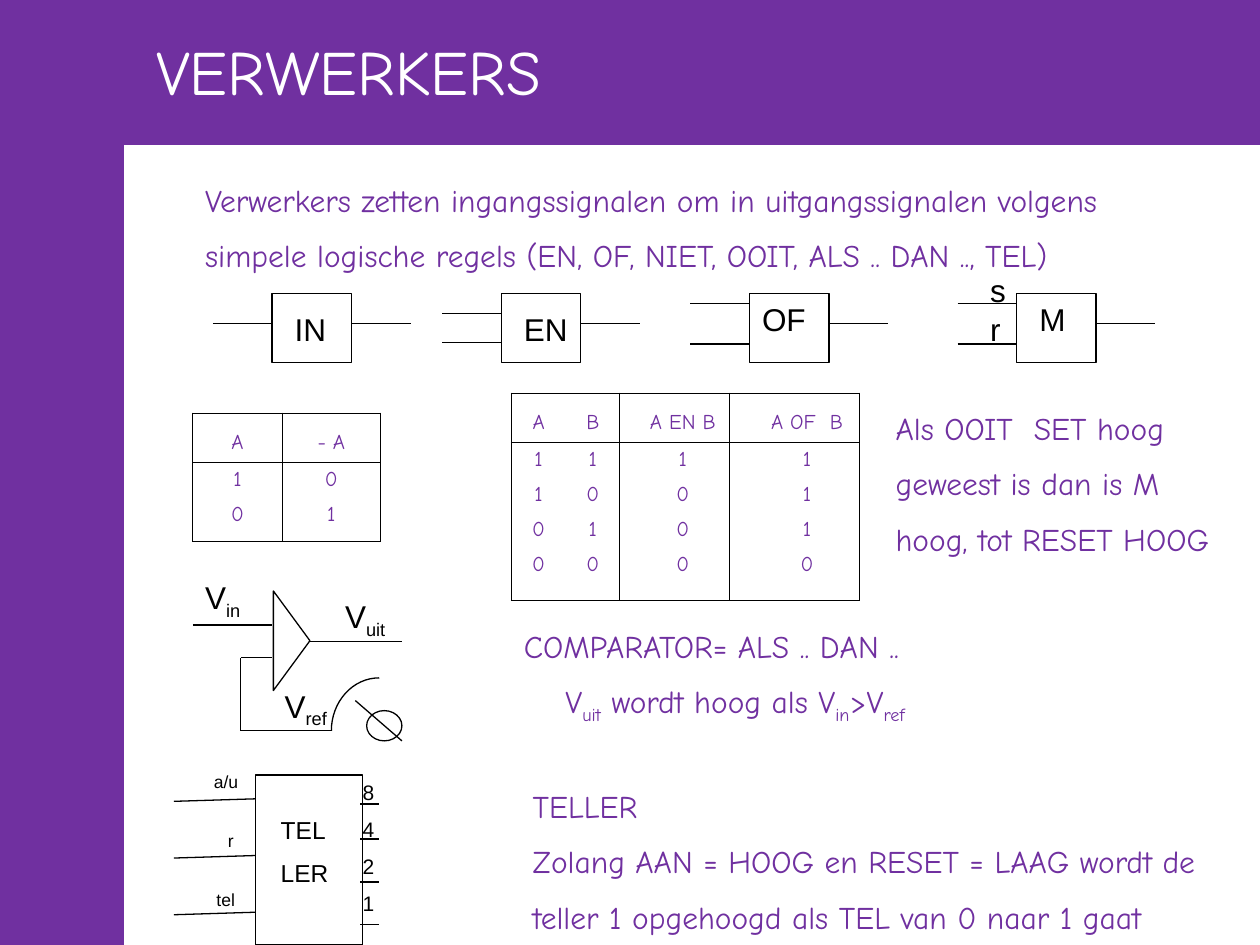
from dataclasses import dataclass
import math

from lxml import etree
from pptx import Presentation
from pptx import util as u
from pptx.dml.color import RGBColor
from pptx.enum import shapes as kinds, text
from pptx.oxml import ns

Inches = u.Inches


@dataclass(frozen=True)
class Theme:
    """Colours, fonts and type sizes of the slide."""
    purple: RGBColor = RGBColor(0x70, 0x30, 0xA0)
    black: RGBColor = RGBColor(0, 0, 0)
    white: RGBColor = RGBColor(255, 255, 255)
    heading_font: str = "Comic Neue"
    label_font: str = "Arial"
    title: int = 36
    body: int = 18
    block: int = 14
    table: int = 12
    pin: int = 10
    rule: float = 0.75
    paragraph_gap: float = 0.55


THEME = Theme()


def style_run(run, size, font, color):
    """Set the type of one run."""
    run.font.size = u.Pt(size)
    run.font.name = font
    run.font.color.rgb = color


def add_text(shapes, left, top, width, height, lines, size=THEME.body,
             font=THEME.label_font, color=THEME.black, indents=()):
    """Add a text box; every second part between underscores is subscript."""
    box = shapes.add_textbox(Inches(left), Inches(top), Inches(width), Inches(height))
    frame = box.text_frame
    frame.word_wrap = True
    frame.auto_size = text.MSO_AUTO_SIZE.SHAPE_TO_FIT_TEXT
    frame.text = "\n".join(lines)
    for index, paragraph in enumerate(frame.paragraphs):
        paragraph.space_before = u.Pt(size * THEME.paragraph_gap)
        if index < len(indents):
            paragraph._p.get_or_add_pPr().set("marL", str(Inches(indents[index])))
        parts = paragraph.text.split("_")
        paragraph.text = parts[0]
        for part in parts[1:]:
            paragraph.add_run().text = part
        for position, run in enumerate(paragraph.runs):
            style_run(run, size, font, color)
            if position % 2:
                run.font._element.set("baseline", "-25000")


def add_body(shapes, left, top, width, height, lines, indents=()):
    """Add purple explanatory text."""
    add_text(shapes, left, top, width, height, lines, THEME.body,
             THEME.heading_font, THEME.purple, indents)


def finish_shape(shape, fill=None):
    """Set fill and outline and remove the shadow."""
    shape.shadow.inherit = False
    if fill is None:
        shape.fill.background()
    else:
        shape.fill.solid()
        shape.fill.fore_color.rgb = fill
    shape.line.color.rgb = fill or THEME.black
    shape.line.width = u.Pt(THEME.rule)


def add_figure(shapes, kind, left, top, width, height, fill=None, rotation=0):
    """Add a preset shape."""
    shape = shapes.add_shape(kind, Inches(left), Inches(top), Inches(width), Inches(height))
    shape.rotation = rotation
    finish_shape(shape, fill)


def add_line(shapes, x1, y1, x2, y2):
    """Add a thin black line."""
    line = shapes.add_connector(kinds.MSO_CONNECTOR.STRAIGHT,
                                Inches(x1), Inches(y1), Inches(x2), Inches(y2))
    line.line.color.rgb = THEME.black
    line.line.width = u.Pt(THEME.rule)
    etree.SubElement(line._element.spPr, ns.qn("a:effectLst"))


def add_quarter_arc(shapes, left, top, width, height, steps=16):
    """Add the upper left quarter of an ellipse as an open outline."""
    points = []
    for step in range(steps + 1):
        angle = math.pi / 2 * step / steps
        points.append((Inches(left + width * (1 - math.cos(angle))),
                       Inches(top + height * (1 - math.sin(angle)))))
    builder = shapes.build_freeform(*points[0])
    builder.add_line_segments(points[1:], close=False)
    finish_shape(builder.convert_to_shape())


def add_gate(shapes, left, label, label_offset, input_heights):
    """Add a logic gate with its input and output wires."""
    top, width, wire = 2.33, 0.63, 0.47
    add_figure(shapes, kinds.MSO_SHAPE.RECTANGLE, left, top, width, 0.55)
    add_line(shapes, left + width, 2.57, left + width + wire, 2.57)
    for height in input_heights:
        add_line(shapes, left - wire, height, left, height)
    add_text(shapes, left + label_offset[0], top + label_offset[1], width, 0.4, [label])


def set_borders(cell, visible):
    """Draw the named sides of a cell and hide the others."""
    properties = cell._tc.get_or_add_tcPr()
    for side in "LRTB":
        line = etree.SubElement(properties, ns.qn(f"a:ln{side}"), w=str(u.Pt(THEME.rule)))
        if side in visible:
            fill = etree.SubElement(line, ns.qn("a:solidFill"))
            etree.SubElement(fill, ns.qn("a:srgbClr"), val=str(THEME.black))
        else:
            etree.SubElement(line, ns.qn("a:noFill"))


def add_truth_table(shapes, left, top, widths, heights, rows, rules, nudges):
    """Add a truth table with vertical rules at the given column edges."""
    graphic = shapes.add_table(len(rows), len(widths), Inches(left), Inches(top),
                               Inches(sum(widths)), Inches(sum(heights)))
    table = graphic.table
    table.first_row = table.horz_banding = False
    for column, width in zip(table.columns, widths):
        column.width = Inches(width)
    for r, values in enumerate(rows):
        table.rows[r].height = Inches(heights[r])
        for c, value in enumerate(values):
            cell = table.cell(r, c)
            sides = {"L": c in rules, "R": c + 1 in rules,
                     "T": r < 2, "B": r in (0, len(rows) - 1)}
            set_borders(cell, [side for side, shown in sides.items() if shown])
            cell.fill.background()
            cell.margin_left, cell.margin_right = Inches(nudges[c]), 0
            cell.margin_top, cell.margin_bottom = Inches(0.04 if r else 0.14), 0
            cell.text = value
            paragraph = cell.text_frame.paragraphs[0]
            paragraph.alignment = text.PP_ALIGN.CENTER
            style_run(paragraph.runs[0], THEME.table, THEME.heading_font, THEME.purple)


def add_gates(shapes):
    """Add the four gates and the memory inputs."""
    add_gate(shapes, 2.16, "IN", (0.08, 0.08), [2.57])
    add_gate(shapes, 3.98, "EN", (0.08, 0.08), [2.49, 2.72])
    add_gate(shapes, 5.95, "OF", (0, 0), [2.41, 2.73])
    add_gate(shapes, 8.07, "M", (0.08, 0), [2.41, 2.73])
    for label, top in (("s", 2.1), ("r", 2.41)):
        add_text(shapes, 7.76, top, 0.39, 0.4, [label])


def add_counter(shapes):
    """Add the counter with its inputs and binary outputs."""
    add_figure(shapes, kinds.MSO_SHAPE.RECTANGLE, 2.03, 6.15, 0.85, 1.35)
    add_text(shapes, 2.13, 6.42, 0.6, 0.68, ["TEL", "LER"], THEME.block)
    for height in (6.38, 6.66, 7, 7.34):
        add_line(shapes, 2.86, height, 3.01, height)
    for label, left, top, height in (("a/u", 1.6, 6.07, 6.36), ("r", 1.71, 6.54, 6.81),
                                     ("tel", 1.62, 7.01, 7.26)):
        add_line(shapes, 1.38, height, 2.03, height - 0.02)
        add_text(shapes, left, top, 0.5, 0.27, [label], THEME.pin)
    add_text(shapes, 2.78, 6.14, 0.33, 1.2, list("8421"), THEME.table)


def add_comparator(shapes):
    """Add the comparator with its adjustable reference."""
    add_figure(shapes, kinds.MSO_SHAPE.ISOSCELES_TRIANGLE, 1.92, 4.94, 0.79, 0.29, rotation=90)
    for ends in ((1.53, 4.96, 2.16, 4.96), (2.16, 5.22, 1.91, 5.22), (1.91, 5.22, 1.91, 5.8),
                 (1.91, 5.8, 2.63, 5.8), (2.45, 5.09, 3.19, 5.09), (2.82, 5.56, 3.19, 5.88)):
        add_line(shapes, *ends)
    add_quarter_arc(shapes, 2.63, 5.38, 0.38, 0.42)
    add_figure(shapes, kinds.MSO_SHAPE.OVAL, 2.91, 5.64, 0.28, 0.24)
    for label, left, top, width in (("V_in", 1.53, 4.54, 0.55), ("V_uit", 2.64, 4.69, 0.6),
                                    ("V_ref", 2.16, 5.4, 0.71)):
        add_text(shapes, left, top, width, 0.4, [label])


def main():
    """Build and save the slide."""
    presentation = Presentation()
    presentation.slide_width, presentation.slide_height = Inches(10), Inches(7.5)
    shapes = presentation.slides.add_slide(presentation.slide_layouts[6]).shapes
    add_figure(shapes, kinds.MSO_SHAPE.RECTANGLE, 0, 0, 10, 1.15, THEME.purple)
    add_figure(shapes, kinds.MSO_SHAPE.RECTANGLE, 0, 0, 0.98, 7.5, THEME.purple)
    add_text(shapes, 1.14, 0.21, 6.22, 0.7, ["VERWERKERS"], THEME.title,
             THEME.heading_font, THEME.white)
    add_body(shapes, 1.53, 1.39, 8.47, 0.85,
             ["Verwerkers zetten ingangssignalen om in uitgangssignalen volgens",
              "simpele logische regels (EN, OF, NIET, OOIT, ALS .. DAN .., TEL)"])
    for add_part in (add_gates, add_counter, add_comparator):
        add_part(shapes.add_group_shape().shapes)
    add_truth_table(shapes, 1.53, 3.28, [0.71, 0.78], [0.39, 0.28, 0.35],
                    [("A", "- A"), "10", "01"], {0, 1, 2}, [0, 0])
    add_truth_table(shapes, 4.06, 3.12, [0.43, 0.43, 0.87, 1.03], [0.39, 0.28, 0.28, 0.28, 0.42],
                    [("A", "B", "A EN B", "A OF  B"), "1111", "1001", "0101", "0000"],
                    {0, 2, 3, 4}, [0, 0, 0.13, 0.2])
    add_body(shapes, 7.01, 3.2, 2.99, 1.3,
             ["Als OOIT  SET hoog", "geweest is dan is M", "hoog, tot RESET HOOG"])
    add_body(shapes, 4.06, 4.93, 5.94, 0.85,
             ["COMPARATOR= ALS .. DAN ..", "V_uit_ wordt hoog als V_in_>V_ref"], (0, 0.33))
    add_body(shapes, 4.13, 6.2, 5.87, 1.3,
             ["TELLER", "Zolang AAN = HOOG en RESET = LAAG wordt de",
              "teller 1 opgehoogd als TEL van 0 naar 1 gaat"])
    presentation.save("out.pptx")


if __name__ == "__main__":
    main()
